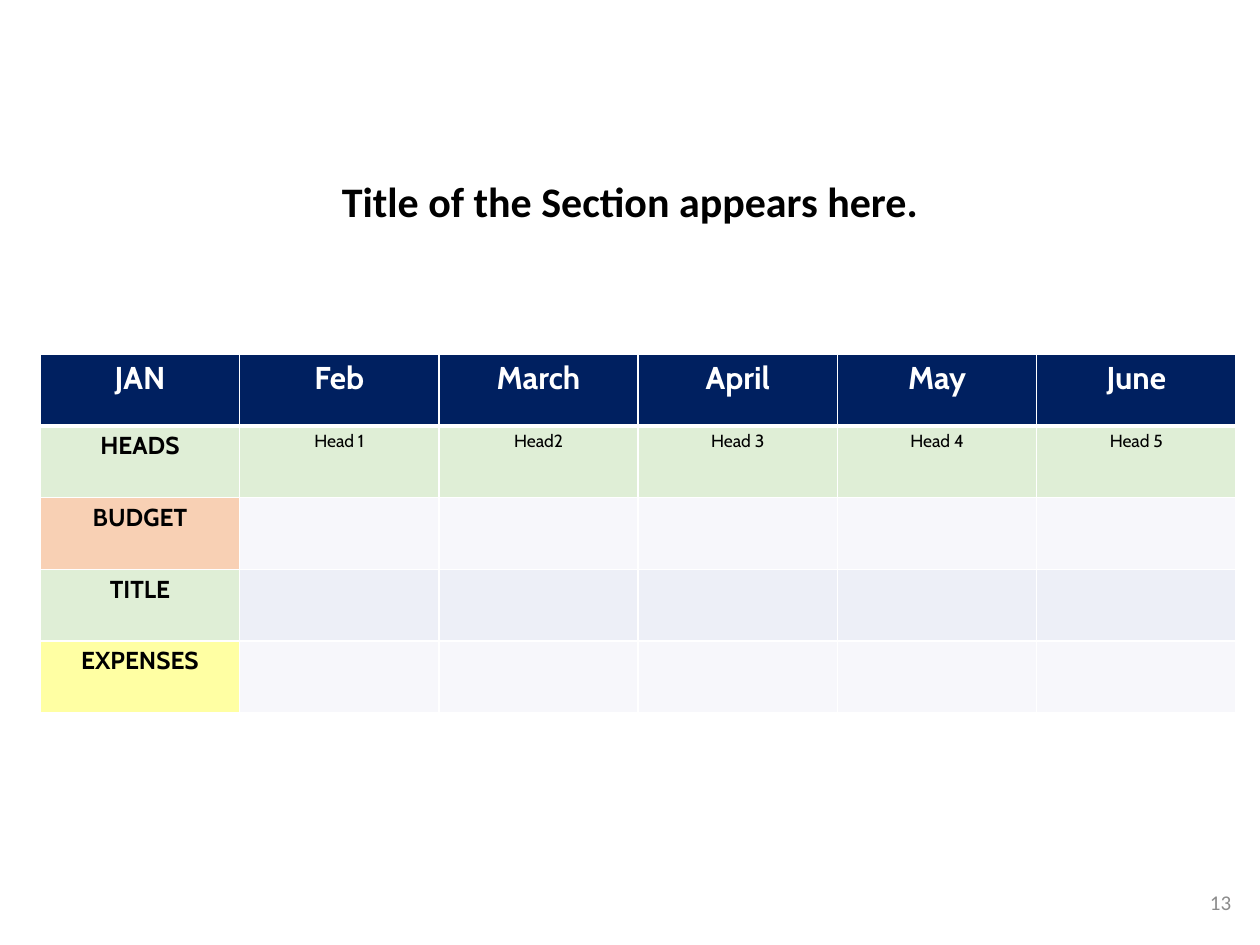
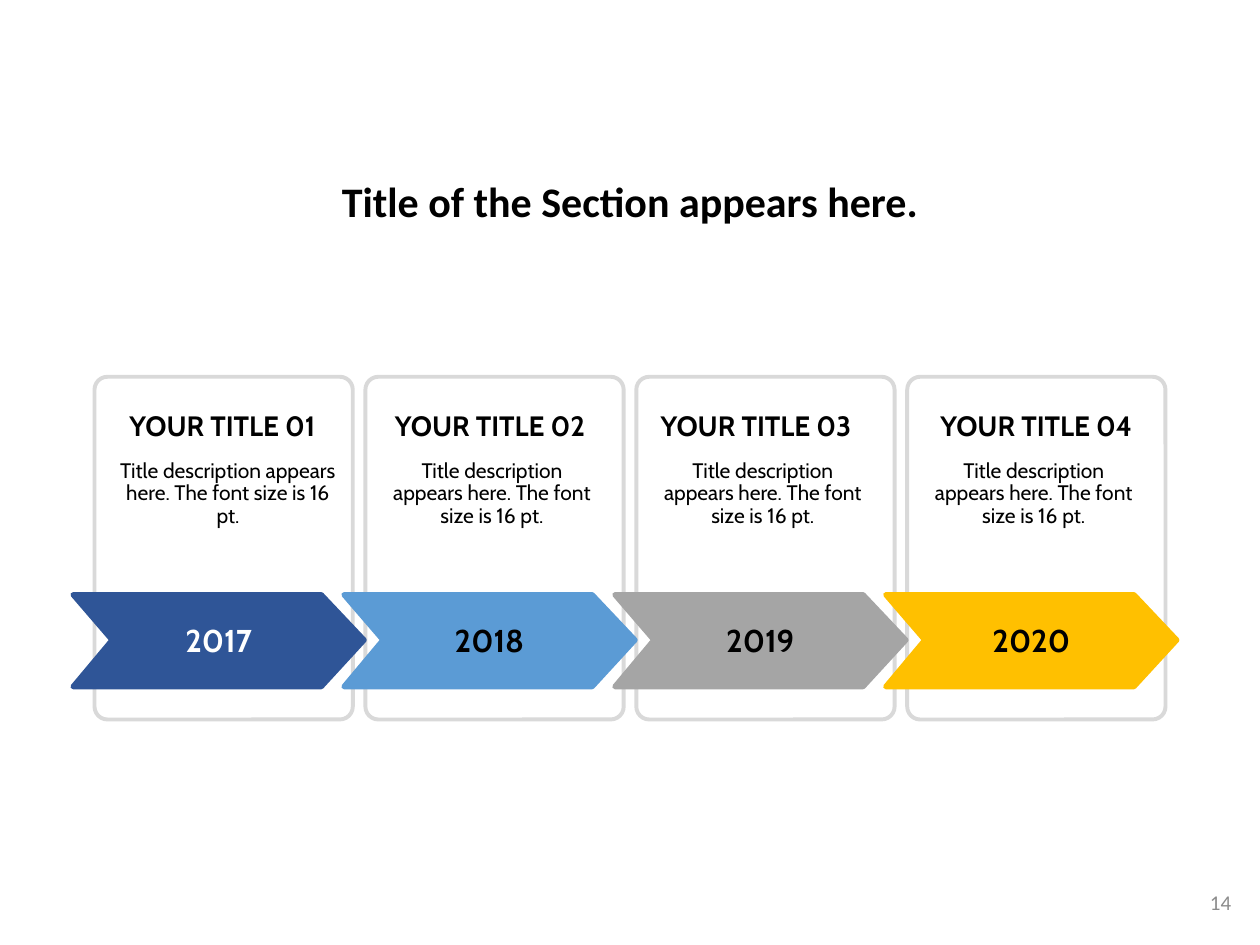
from dataclasses import dataclass

from lxml import etree
from pptx import Presentation
from pptx import util as u
from pptx.dml import color as clr
from pptx.enum import shapes, text
from pptx.oxml import ns


@dataclass(frozen=True)
class Theme:
    heading_font: str = "Calibri"
    body_font: str = "Cabin"
    heading_size: float = 24
    large: float = 18
    card_title: float = 16
    row_label: float = 14
    small: float = 12
    tiny: float = 10
    black: str = "000000"
    white: str = "FFFFFF"
    page_grey: str = "8C8C8C"
    card_grey: str = "D9D9D9"
    navy: str = "002060"
    green: str = "A9D18E"
    orange: str = "ED7D31"
    yellow: str = "FFFF00"
    pale: str = "E9EBF5"
    pale_dark: str = "CFD5EA"
    tint: int = 36  # opacity of the table body, in percent


THEME = Theme()
CENTER, RIGHT = text.PP_ALIGN.CENTER, text.PP_ALIGN.RIGHT
TOP, MIDDLE, BOTTOM = (text.MSO_ANCHOR.TOP, text.MSO_ANCHOR.MIDDLE,
                       text.MSO_ANCHOR.BOTTOM)


@dataclass(frozen=True)
class Style:
    size: float
    color: str = THEME.black
    bold: bool = False
    font: str = THEME.body_font
    align: text.PP_ALIGN = CENTER


@dataclass(frozen=True)
class Box:
    left: float
    top: float
    width: float
    height: float

    def lengths(self) -> tuple:
        return tuple(map(u.Inches, (self.left, self.top, self.width, self.height)))


@dataclass(frozen=True)
class BudgetRow:
    label: str
    label_fill: str
    cells: tuple
    cell_fill: str


@dataclass(frozen=True)
class Milestone:
    year: str
    title: str
    arrow_fill: str
    year_color: str
    title_left: float
    title_width: float
    note_left: float
    note_width: float


MONTHS = ("JAN", "Feb", "March", "April", "May", "June")
EMPTY = ("",) * 5
BUDGET_ROWS = (
    BudgetRow("HEADS", THEME.green,
              ("Head 1", "Head2", "Head 3", "Head 4", "Head 5"), THEME.green),
    BudgetRow("BUDGET", THEME.orange, EMPTY, THEME.pale),
    BudgetRow("TITLE", THEME.green, EMPTY, THEME.pale_dark),
    BudgetRow("EXPENSES", THEME.yellow, EMPTY, THEME.pale),
)

NOTE = "Title description appears here. The font size is 16 pt."
MILESTONES = (
    Milestone("2017", "YOUR TITLE 01", "2F5597", THEME.white, 0.82, 1.89, 0.88, 1.86),
    Milestone("2018", "YOUR TITLE 02", "5B9BD5", THEME.black, 2.98, 1.82, 3.02, 1.77),
    Milestone("2019", "YOUR TITLE 03", "A5A5A5", THEME.black, 5.07, 1.86, 5.17, 1.77),
    Milestone("2020", "YOUR TITLE 04", "FFC000", THEME.black, 7.28, 1.89, 7.32, 1.77),
)
MILESTONE_PITCH = 2.15
ARROW_OUTLINE = ((0.58, 4.72), (2.55, 4.72), (2.89, 5.08),
                 (2.55, 5.45), (0.58, 5.45), (0.89, 5.08))


# Text helpers
def write(paragraph, words: str, style: Style) -> None:
    paragraph.text = words
    paragraph.alignment = style.align
    font = paragraph.font
    font.name, font.size, font.bold = style.font, u.Pt(style.size), style.bold
    font.color.rgb = clr.RGBColor.from_string(style.color)


def add_text(slide, box: Box, words: str, style: Style, anchor=TOP,
             margins: tuple = (0.1, 0.05), grow: bool = True):
    frame = slide.shapes.add_textbox(*box.lengths()).text_frame
    frame.word_wrap = True
    frame.vertical_anchor = anchor
    frame.margin_left = frame.margin_right = u.Inches(margins[0])
    frame.margin_top = frame.margin_bottom = u.Inches(margins[1])
    if grow:
        frame.auto_size = text.MSO_AUTO_SIZE.SHAPE_TO_FIT_TEXT
    write(frame.paragraphs[0], words, style)
    return frame.paragraphs[0]


# Parts shared by both slides
def add_section_slide(prs, page: int):
    slide = prs.slides.add_slide(prs.slide_layouts[5])
    heading = slide.shapes.title
    heading.left, heading.top, heading.width, heading.height = Box(
        1.81, 1.39, 6.38, 0.79).lengths()
    heading.text_frame.vertical_anchor = TOP
    heading.text_frame.auto_size = text.MSO_AUTO_SIZE.NONE
    line = heading.text_frame.paragraphs[0]
    write(line, "Title of the Section appears here.",
          Style(THEME.heading_size, bold=True, font=THEME.heading_font))
    line.line_spacing = 0.9
    add_text(slide, Box(7.62, 6.96, 2.25, 0.4), str(page),
             Style(THEME.small, THEME.page_grey, font=THEME.heading_font, align=RIGHT),
             MIDDLE, grow=False)
    return slide


# Budget table
def add_border(cell, side: str, points: float) -> None:
    edge = etree.SubElement(cell._tc.get_or_add_tcPr(), ns.qn(f"a:ln{side}"),
                            w=str(u.Pt(points)))
    fill = etree.SubElement(edge, ns.qn("a:solidFill"))
    etree.SubElement(fill, ns.qn("a:srgbClr"), val=THEME.white)


def fill_cell(cell, words: str, style: Style, fill: str,
              opacity: int = 100, bottom: float = 1) -> None:
    cell.margin_left = cell.margin_right = u.Inches(0.07)
    cell.margin_top = cell.margin_bottom = u.Inches(0.04)
    for side, points in (("L", 1), ("R", 1), ("T", 1), ("B", bottom)):
        add_border(cell, side, points)
    cell.fill.solid()
    cell.fill.fore_color.rgb = clr.RGBColor.from_string(fill)
    if opacity < 100:
        tone = cell._tc.tcPr.find(".//" + ns.qn("a:solidFill") + "[last()]")
        tone = cell._tc.tcPr.find(ns.qn("a:solidFill")).find(ns.qn("a:srgbClr"))
        etree.SubElement(tone, ns.qn("a:alpha"), val=str(opacity * 1000))
    write(cell.text_frame.paragraphs[0], words, style)


def build_budget(prs) -> None:
    slide = add_section_slide(prs, 13)
    budget = slide.shapes.add_table(len(BUDGET_ROWS) + 1, len(MONTHS),
                                    *Box(0.32, 2.81, 9.49, 2.85).lengths()).table
    month_style = Style(THEME.large, THEME.white, bold=True)
    label_style = Style(THEME.row_label, bold=True)
    for column, month in enumerate(MONTHS):
        fill_cell(budget.cell(0, column), month, month_style, THEME.navy, bottom=3)
    for number, row in enumerate(BUDGET_ROWS, 1):
        fill_cell(budget.cell(number, 0), row.label, label_style,
                  row.label_fill, THEME.tint)
        for column, words in enumerate(row.cells, 1):
            fill_cell(budget.cell(number, column), words, Style(THEME.tiny),
                      row.cell_fill, THEME.tint)


# Timeline of milestones
def add_card(slide, offset: float) -> None:
    box = Box(0.75 + offset, 2.99, 2.05, 2.72)
    card = slide.shapes.add_shape(shapes.MSO_SHAPE.ROUNDED_RECTANGLE, *box.lengths())
    card.adjustments[0] = 0.05
    card.shadow.inherit = False
    card.fill.background()
    card.line.color.rgb = clr.RGBColor.from_string(THEME.card_grey)
    card.line.width = u.Pt(2.25)


def add_arrow(slide, offset: float, fill: str) -> None:
    points = [(u.Inches(x + offset), u.Inches(y)) for x, y in ARROW_OUTLINE]
    builder = slide.shapes.build_freeform(*points[0])
    builder.add_line_segments(points[1:], close=True)
    arrow = builder.convert_to_shape()
    arrow.shadow.inherit = False
    tone = clr.RGBColor.from_string(fill)
    arrow.fill.solid()
    arrow.fill.fore_color.rgb = tone
    # A thick line with round joins softens the corners
    arrow.line.color.rgb = tone
    arrow.line.width = u.Pt(3)
    etree.SubElement(arrow.line._get_or_add_ln(), ns.qn("a:round"))


def add_milestone_text(slide, offset: float, step: Milestone) -> None:
    add_text(slide, Box(1.32 + offset, 4.88, 0.83, 0.4), step.year,
             Style(THEME.large, step.year_color, bold=True), MIDDLE)
    add_text(slide, Box(step.title_left, 3.19, step.title_width, 0.37), step.title,
             Style(THEME.card_title, bold=True), BOTTOM)
    note = add_text(slide, Box(step.note_left, 3.63, step.note_width, 0.58), NOTE,
                    Style(THEME.small), margins=(0.04, 0.02))
    note.line_spacing = 0.9


def build_timeline(prs) -> None:
    slide = add_section_slide(prs, 14)
    steps = [(i * MILESTONE_PITCH, step) for i, step in enumerate(MILESTONES)]
    for offset, _ in steps:
        add_card(slide, offset)
    for offset, step in steps:
        add_arrow(slide, offset, step.arrow_fill)
        add_milestone_text(slide, offset, step)


def main() -> None:
    prs = Presentation()
    prs.slide_width, prs.slide_height = u.Inches(10), u.Inches(7.5)
    build_budget(prs)
    build_timeline(prs)
    prs.save("out.pptx")


if __name__ == "__main__":
    main()
